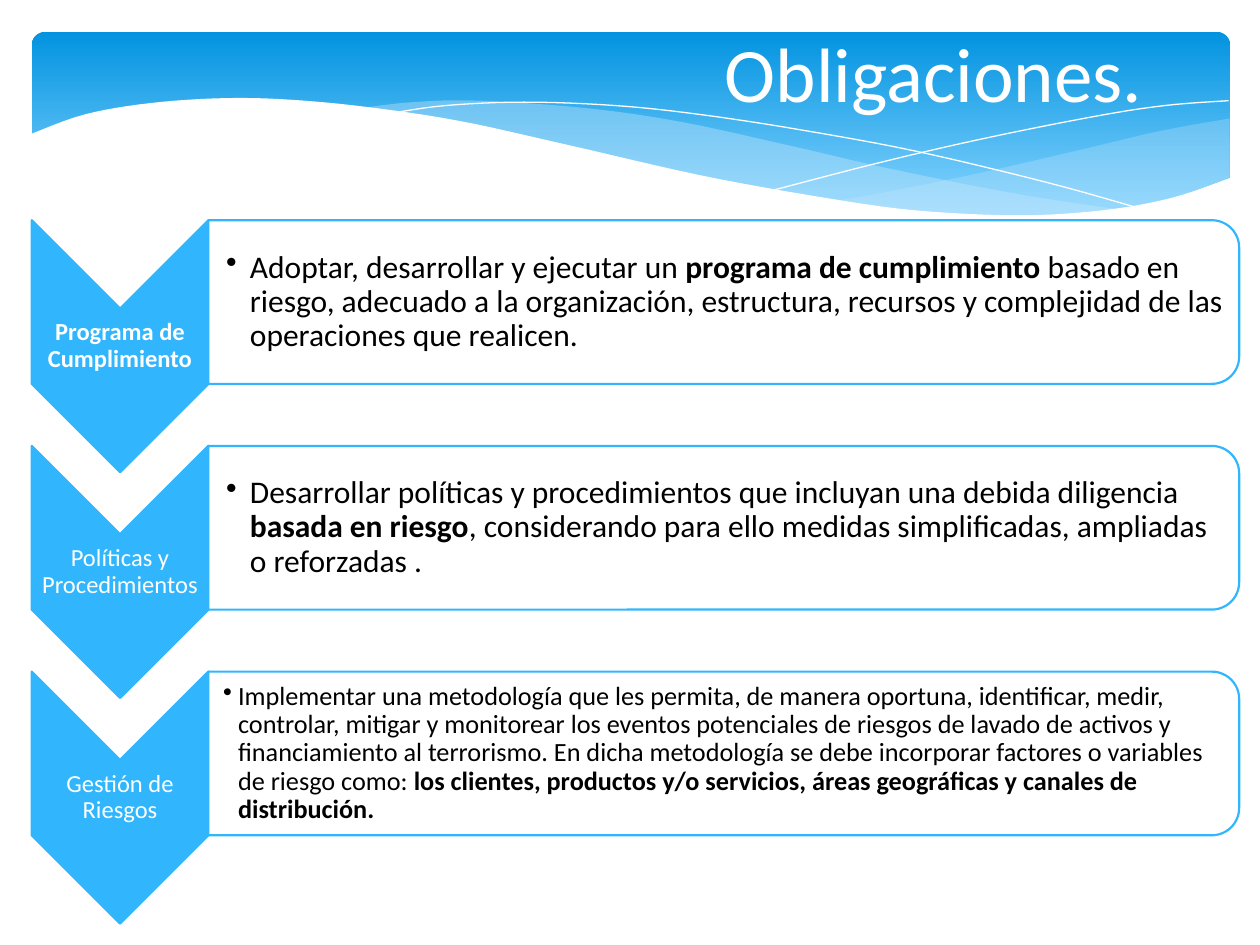
from lxml.etree import SubElement as Sub
from pptx import Presentation
from pptx.dml.color import RGBColor
from pptx.enum.shapes import MSO_SHAPE as Shp
from pptx.enum.text import MSO_ANCHOR as Anchor, MSO_AUTO_SIZE as Auto, PP_ALIGN as Align
from pptx.oxml.ns import qn
from pptx.util import Cm, Pt

BLUE, PALE, WHITE, BLACK = "31B6FD", "C6E7FC", "FFFFFF", "000000"
LEFT, TOP, PITCH = 0.64, 4.44, 4.55
CHEV_W, CHEV_H, BAR_W, BAR_H = 3.56, 5.08, 20.78, 3.3

# Header curves, in cm
RIGHT = [
    [(24.79, 2.39), (23.39, 2.64), (21.87, 3), (19.79, 3.48), (17.93, 3.86), (16.79, 4.06)],
    [(16.79, 4.06), (18.59, 4.27), (20.4, 4.37), (22.15, 4.29), (23.57, 4.01), (24.79, 3.58)],
]
MIDDLE = [
    [(22.68, 4.24), (20.5, 3.91), (17.93, 3.4), (15.98, 2.95), (13.74, 2.46),
     (11.81, 2.18), (9.65, 2.03), (8.33, 2.06), (7.26, 2.18)],
    [(7.26, 2.18), (9.19, 2.46), (11.4, 2.95), (14.38, 3.63), (16.51, 4.01),
     (18.69, 4.29), (20.5, 4.39), (21.77, 4.34), (22.68, 4.24)],
]
FALL = [(7.85, 2.29), (8.97, 2.13), (10.57, 2.06), (12.42, 2.13), (14.12, 2.31),
        (16.15, 2.62), (18.47, 3.05), (21.11, 3.68), (23.04, 4.22)]
RISE = [(15.57, 3.84), (17.65, 3.3), (19.71, 2.82), (22, 2.36), (23.47, 2.13), (24.77, 2.03)]
FRONT = [
    [(24.82, 3.58), (23.62, 3.99), (22.23, 4.24), (20.55, 4.34), (18.44, 4.24),
     (16.46, 3.96), (14.1, 3.53), (11.35, 2.9), (9.27, 2.44), (7.42, 2.16),
     (5.84, 2.01), (4.5, 1.98), (3.02, 2.08), (1.7, 2.31), (0.58, 2.72)],
    [(0.58, 5.69), (24.82, 5.69)],
]

# Label, label is bold, body size, left inset, indent, body runs (text, bold)
ROWS = [
    ("Programa de Cumplimiento", True, 18, 0.36, 0.48, [
        ("Adoptar, desarrollar y ejecutar un ", False),
        ("programa de cumplimiento", True),
        (" basado en riesgo, adecuado a la organización, estructura, recursos y "
         "complejidad de las operaciones que realicen.", False)]),
    ("Políticas y Procedimientos", False, 18, 0.36, 0.48, [
        ("Desarrollar políticas y procedimientos que incluyan una debida diligencia ", False),
        ("basada en riesgo", True),
        (", considerando para ello medidas simplificadas, ampliadas o reforzadas .", False)]),
    ("Gestión de Riesgos", False, 15, 0.3, 0.3, [
        ("Implementar una metodología que les permita, de manera oportuna, identificar, "
         "medir, controlar, mitigar y monitorear los eventos potenciales de riesgos de "
         "lavado de activos y financiamiento al terrorismo. En dicha metodología se debe "
         "incorporar factores o variables de riesgo como: ", False),
        ("los clientes, productos y/o servicios, áreas geográficas y canales de "
         "distribución.", True)]),
]


def color(code):
    return RGBColor.from_string(code)


def bend(knots, steps=6):
    """Return points of a smooth (Catmull-Rom) curve through the knots."""
    if len(knots) < 3:
        return knots
    ends = [knots[0], *knots, knots[-1]]
    points = []
    for a, b, c, d in zip(ends, ends[1:], ends[2:], ends[3:]):
        for step in range(steps):
            t = step / steps
            points.append(tuple(
                q + t / 2 * (r - p + t * (2 * p - 5 * q + 4 * r - s + t * (3 * (q - r) + s - p)))
                for p, q, r, s in zip(a, b, c, d)))
    return points + [knots[-1]]


class Deck:
    font = "Calibri"

    def __init__(self):
        self.prs = Presentation()
        self.prs.slide_width, self.prs.slide_height = Cm(25.4), Cm(19.05)
        self.slide = self.prs.slides.add_slide(self.prs.slide_layouts[5])
        self.shapes = self.slide.shapes

    def paint(self, shape, fill, alpha=100):
        shape.shadow.inherit = False
        shape.fill.solid()
        shape.fill.fore_color.rgb = color(fill)
        if alpha < 100:
            tone = shape._element.spPr.find(qn("a:solidFill"))[0]
            Sub(tone, qn("a:alpha"), val=str(alpha * 1000))

    def panel(self, x, y, w, h):
        """Add the rounded header with its gradient."""
        shape = self.shapes.add_shape(Shp.ROUNDED_RECTANGLE, Cm(x), Cm(y), Cm(w), Cm(h))
        shape.adjustments[0] = 0.07
        shape.shadow.inherit = False
        shape.line.fill.background()
        shape.fill.gradient()
        shape.fill.gradient_angle = 270
        for stop, (code, place) in zip(shape.fill.gradient_stops, [("0293E0", 0), ("83D3FE", 0.9)]):
            stop.color.rgb, stop.position = color(code), place

    def trace(self, points, close):
        first, *rest = [(Cm(x), Cm(y)) for x, y in points]
        pen = self.shapes.build_freeform(*first)
        pen.add_line_segments(rest, close=close)
        return pen.convert_to_shape()

    def wave(self, parts, fill, alpha=100):
        shape = self.trace([point for part in parts for point in bend(part)], True)
        self.paint(shape, fill, alpha)
        shape.line.fill.background()

    def thread(self, knots):
        """Add a white hairline curve."""
        shape = self.trace(bend(knots), False)
        shape.shadow.inherit = False
        shape.fill.background()
        shape.line.color.rgb = color(WHITE)
        shape.line.width = Pt(0)

    def turned(self, kind, x, y, w, h, fill, alpha=100):
        """Add a shape turned a quarter, so that it covers the given box."""
        shape = self.shapes.add_shape(
            kind, Cm(x + (w - h) / 2), Cm(y + (h - w) / 2), Cm(h), Cm(w))
        shape.rotation = 90
        self.paint(shape, fill, alpha)
        shape.line.color.rgb = color(BLUE)
        shape.line.width = Pt(1.25)

    def add_runs(self, para, runs, size, ink):
        for text, bold in runs:
            run = para.add_run()
            run.text = text
            run.font.name, run.font.size, run.font.bold = self.font, Pt(size), bold
            run.font.color.rgb = color(ink)

    def text(self, x, y, w, h, runs, size, ink, inset=0.03):
        frame = self.shapes.add_textbox(Cm(x), Cm(y), Cm(w), Cm(h)).text_frame
        frame.word_wrap = True
        frame.vertical_anchor = Anchor.MIDDLE
        frame.margin_left = Cm(inset)
        frame.margin_top = frame.margin_right = frame.margin_bottom = Cm(0.03)
        para = frame.paragraphs[0]
        para.line_spacing = 0.9
        self.add_runs(para, runs, size, ink)
        return para

    def label(self, x, y, w, h, text, bold):
        self.text(x, y, w, h, [(text, bold)], 14, WHITE).alignment = Align.CENTER

    def bullet(self, x, y, w, h, runs, size, inset, indent):
        para = self.text(x, y, w, h, runs, size, BLACK, inset)
        para.level = 1
        props = para._p.get_or_add_pPr()
        props.set("marL", str(Cm(indent)))
        props.set("indent", str(-Cm(indent)))
        Sub(props, qn("a:buChar"), char="•")

    def title(self, text, x, y, w, h):
        shape = self.shapes.title
        self.shapes._spTree.append(shape._element)  # in front of the header
        shape.left, shape.top, shape.width, shape.height = Cm(x), Cm(y), Cm(w), Cm(h)
        frame = shape.text_frame
        frame.auto_size = Auto.NONE
        frame.vertical_anchor = Anchor.MIDDLE
        para = frame.paragraphs[0]
        para.alignment = Align.RIGHT
        self.add_runs(para, [(text, False)], 44, WHITE)


def main():
    deck = Deck()
    deck.panel(0.64, 0.64, 24.16, 3.96)
    deck.wave(RIGHT, PALE, 29)
    deck.wave(MIDDLE, PALE, 40)
    deck.thread(FALL)
    deck.thread(RISE)
    deck.wave(FRONT, WHITE)
    deck.title("Obligaciones.", 0.43, -0.3, 22.86, 3.48)

    bar = LEFT + CHEV_W
    for row, (name, bold, size, inset, indent, runs) in enumerate(ROWS):
        y = TOP + row * PITCH
        deck.turned(Shp.CHEVRON, LEFT, y, CHEV_W, CHEV_H, BLUE)
        deck.label(LEFT, y + CHEV_W / 2, CHEV_W, CHEV_H - CHEV_W, name, bold)
        deck.turned(Shp.ROUND_2_SAME_RECTANGLE, bar, y, BAR_W, BAR_H, WHITE, 90)
        deck.bullet(bar, y + 0.16, BAR_W - 0.16, BAR_H - 0.32, runs, size, inset, indent)
    deck.prs.save("out.pptx")


if __name__ == "__main__":
    main()
